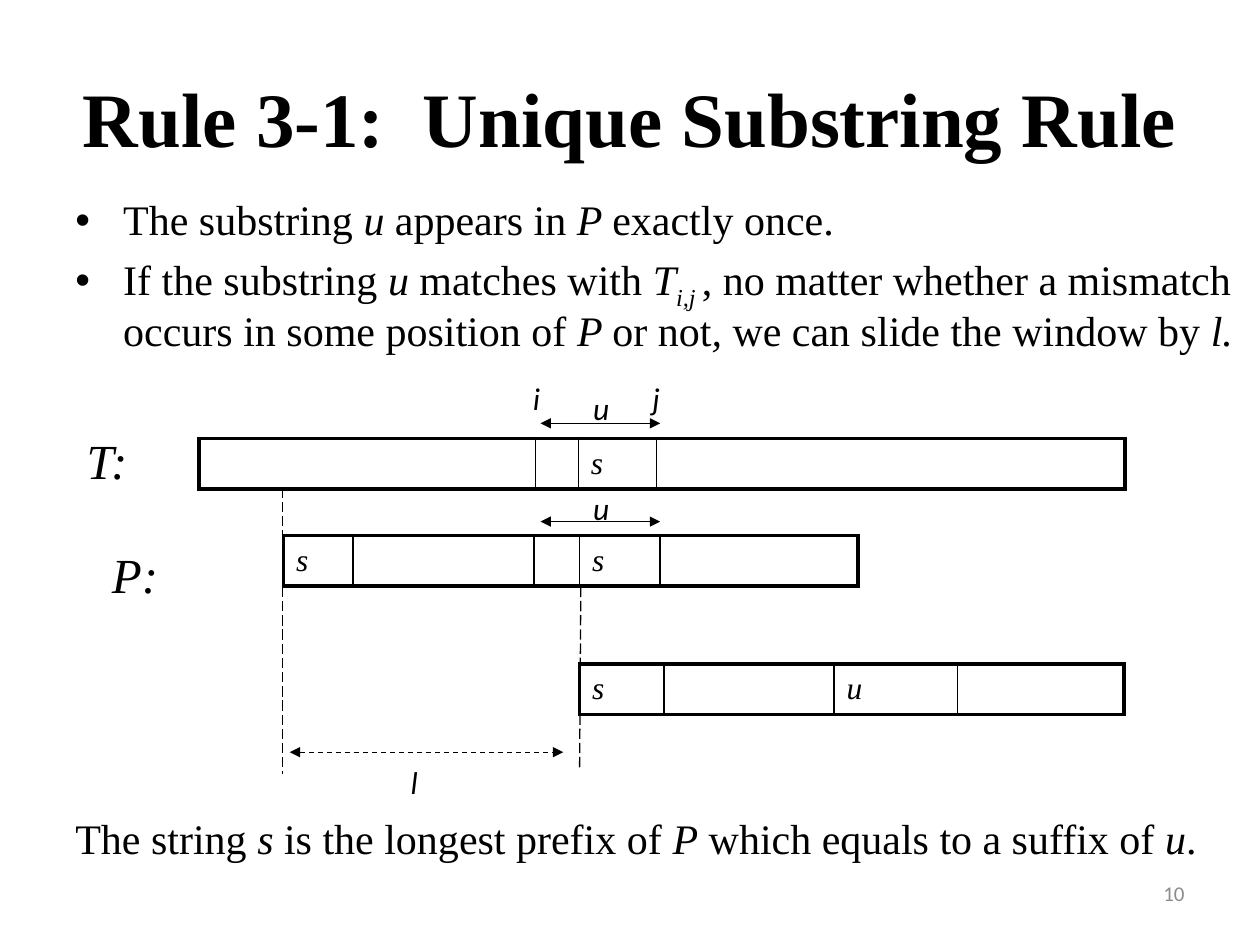
from itertools import accumulate

from lxml import etree
from pptx import Presentation
from pptx import util as u
from pptx.dml.color import RGBColor
from pptx.enum import dml, shapes, text
from pptx.oxml.ns import qn

BLACK = RGBColor(0, 0, 0)
GREY = RGBColor(0x8C, 0x8C, 0x8C)
SERIF = "Times New Roman"
SANS = "Calibri"
TITLE_ONLY = 5


def write(para, words, size=24, font=SERIF, color=BLACK, bold=False,
          align=text.PP_ALIGN.LEFT):
    """Write words into para; *...* is italic and _..._ is subscript."""
    para.alignment = align
    for i, part in enumerate(words.split("*")):
        for j, piece in enumerate(part.split("_")):
            if not piece:
                continue
            span = para.add_run()
            span.text = piece
            span.font.size, span.font.name = u.Pt(size), font
            span.font.color.rgb = color
            span.font.bold, span.font.italic = bold, i % 2 == 1
            if j % 2:
                span.font._element.set("baseline", "-25000")


def add_child(parent, tag, **attributes):
    return etree.SubElement(parent, qn(tag), attributes)


class Board:
    """The current slide on a grid of 100 columns by 75 rows."""

    def __init__(self, deck):
        self.page = deck.slides.add_slide(deck.slide_layouts[TITLE_ONLY])
        self.column = deck.slide_width / 100
        self.row = deck.slide_height / 75

    def place(self, *lengths):
        units = (self.column, self.row) * 2
        return [u.Emu(round(n * unit)) for n, unit in zip(lengths, units)]

    def title(self, words, *area):
        box = self.page.shapes.title
        box.left, box.top, box.width, box.height = self.place(*area)
        frame = box.text_frame
        frame.auto_size = text.MSO_AUTO_SIZE.NONE
        frame.vertical_anchor = text.MSO_ANCHOR.MIDDLE
        write(frame.paragraphs[0], words, size=44, bold=True,
              align=text.PP_ALIGN.CENTER)

    def label(self, words, *area, anchor=text.MSO_ANCHOR.TOP, **style):
        frame = self.page.shapes.add_textbox(*self.place(*area)).text_frame
        frame.word_wrap = True
        frame.vertical_anchor = anchor
        write(frame.paragraphs[0], words, **style)

    def bullets(self, items, *area):
        frame = self.page.shapes.add_textbox(*self.place(*area)).text_frame
        frame.word_wrap = True
        for i, words in enumerate(items):
            para = frame.add_paragraph() if i else frame.paragraphs[0]
            para.line_spacing = 0.95
            para.space_before = u.Pt(4.8)
            write(para, words)
            props = para._p.get_or_add_pPr()
            indent = u.Inches(0.38)
            props.set("marL", str(indent))
            props.set("indent", str(-indent))
            add_child(props, "a:buFont", typeface="Arial")
            add_child(props, "a:buChar", char="•")

    def strip(self, left, top, widths, letters):
        """A one-row string; letters maps a cell's index to its symbol."""
        area = self.place(left, top, sum(widths), 4)
        table = self.page.shapes.add_table(1, len(widths), *area).table
        table.first_row = table.horz_banding = False
        last = len(widths) - 1
        for i, width in enumerate(widths):
            table.columns[i].width = self.place(width)[0]
            cell = table.cell(0, i)
            cell.vertical_anchor = text.MSO_ANCHOR.MIDDLE
            para = cell.text_frame.paragraphs[0]
            para.font.size = u.Pt(18)
            write(para, letters.get(i, ""), size=18)
            self.borders(cell, L=2.25 if i == 0 else 1,
                         R=2.25 if i == last else 1, T=2.25, B=2.25)
            cell.fill.background()

    def borders(self, cell, **points):
        props = cell._tc.get_or_add_tcPr()
        for side, width in points.items():
            line = add_child(props, f"a:ln{side}", w=str(u.Pt(width)))
            fill = add_child(line, "a:solidFill")
            add_child(fill, "a:srgbClr", val=str(BLACK))

    def line(self, start, end, dash=None, arrows=False):
        link = self.page.shapes.add_connector(
            shapes.MSO_CONNECTOR.STRAIGHT, *self.place(*start, *end))
        link.line.color.rgb = BLACK
        link.line.width = u.Pt(0.75)
        if dash:
            link.line.dash_style = dash
        if arrows:
            stroke = link.line._get_or_add_ln()
            for end_tag in ("a:headEnd", "a:tailEnd"):
                add_child(stroke, end_tag, type="triangle")
        add_child(link._element.spPr, "a:effectLst")


def main():
    deck = Presentation()
    deck.slide_width, deck.slide_height = u.Inches(10), u.Inches(7.5)
    board = Board(deck)

    # Title, rule and conclusion
    board.title("Rule 3-1:  Unique Substring Rule ", 5, 3, 90, 12.5)
    board.bullets([
        "The substring *u* appears in *P *exactly once.",
        "If the substring *u* matches with *T_i,j _*, no matter whether a "
        "mismatch occurs in some position of *P *or not*, *we can slide the "
        "window by *l.*",
    ], 5, 15.2, 95, 13)
    board.label("The string *s* is the longest prefix of *P* which equals to "
                "a suffix of *u*.", 5, 64, 95, 5)

    # Text, pattern and shifted pattern
    board.label("*T:*", 5.9, 33.7, 8, 5.5, size=28)
    board.label("*P:*", 7.9, 42.7, 8, 5.5, size=28)
    board.strip(15.8, 34.8, [26.7, 3.4, 6.2, 37.2], {2: "*s*"})
    board.strip(22.5, 42.5, [5.5, 14.4, 3.6, 6.4, 15.7], {0: "*s*", 3: "*s*"})
    board.strip(46, 52.7, [6.7, 13.5, 9.8, 13.2], {0: "*s*", 2: "*u*"})

    # Position, substring and shift symbols
    for symbol, left, top in [("i", 41.3, 29.6), ("j", 50.8, 29.6),
                              ("u", 46.1, 30.4), ("u", 46.1, 38.3),
                              ("l", 31.6, 60.1)]:
        board.label(f"*{symbol}*", left, top, 2.9, 4, size=18, font=SANS)

    # Window edges, shift length and extents of u
    long_dash = dml.MSO_LINE.LONG_DASH
    board.line((22.4, 38.7), (22.4, 61.4), dash=long_dash)
    board.line((46, 60.9), (46.1, 46.5), dash=long_dash)
    board.line((23, 59.7), (44.7, 59.7), dash=dml.MSO_LINE.DASH, arrows=True)
    for height in (33.6, 41.4):
        board.line((42.9, height), (52.4, height), arrows=True)

    # Page number
    board.label("10", 71.7, 68.3, 23.3, 5.2, anchor=text.MSO_ANCHOR.MIDDLE,
                size=12, font=SANS, color=GREY, align=text.PP_ALIGN.RIGHT)

    deck.save("out.pptx")


if __name__ == "__main__":
    main()
